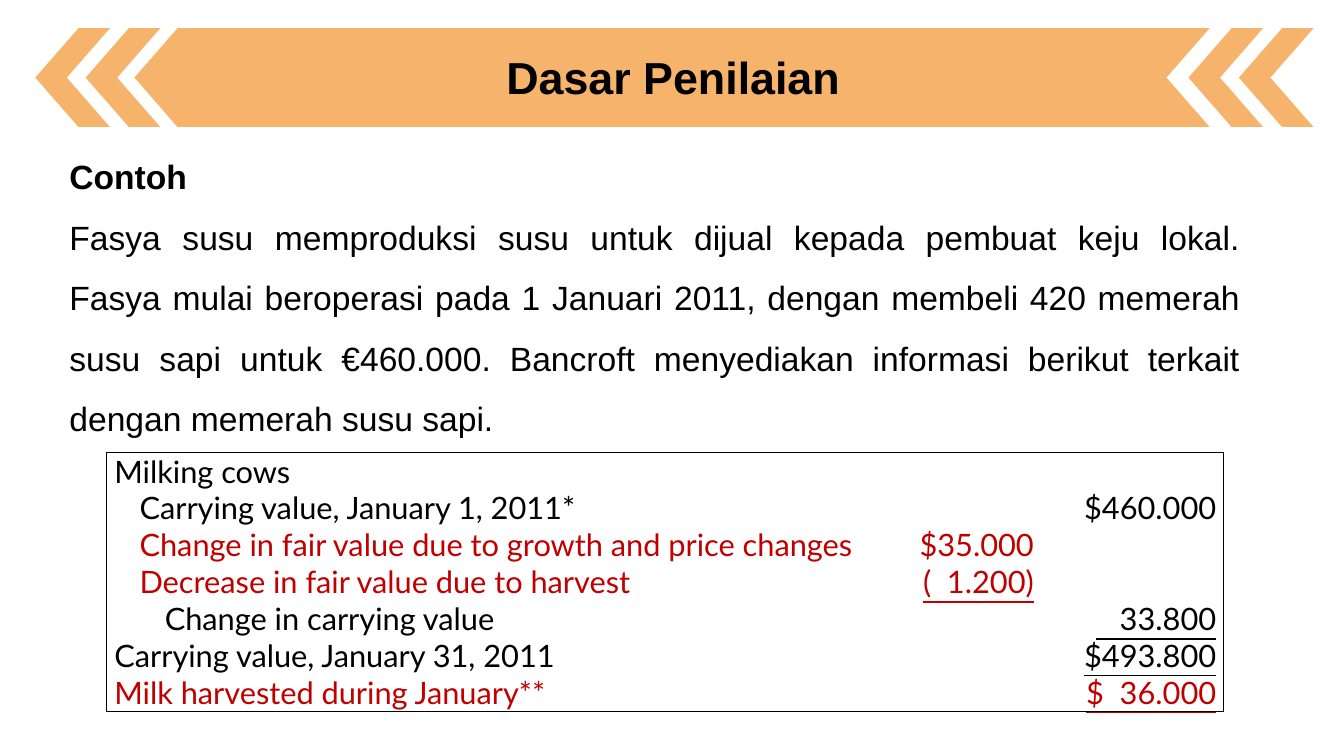
from dataclasses import dataclass

from lxml import etree
from pptx import Presentation
from pptx.dml.color import RGBColor
from pptx.enum import shapes, text
from pptx.oxml import ns
from pptx.util import Pt

COLORS = {"banner": "F3932D", "ink": "000000", "change": "C00000"}
BANNER_OPACITY = 70
BANNER_TOP, BANNER_HEIGHT = 20.16, 70.56
CHEVRON_WIDTH, CHEVRON_NOTCH = 53.3, 30.8
CHEVRON_LEFTS = (25.2, 61.2, 848.9, 884.9)
LEDGER_LINE = 26.4
LEDGER_SIZE = 22


@dataclass
class Entry:
    wording: str
    color: str = "ink"
    indent: float = 0
    underline: bool = False
    lines_before: int = 0


@dataclass
class LedgerColumn:
    width: float
    align: text.PP_ALIGN
    borders: str
    entries: list[Entry]
    lines_above: int = 0


LEDGER = [
    LedgerColumn(549.4, text.PP_ALIGN.JUSTIFY, "LTB", [
        Entry("Milking cows"),
        Entry("Carrying value, January 1, 2011*", indent=18),
        Entry("Change in fair value due to growth and price changes", "change", 18),
        Entry("Decrease in fair value due to harvest", "change", 18),
        Entry("Change in carrying value", indent=36),
        Entry("Carrying value, January 31, 2011"),
        Entry("Milk harvested during January**", "change"),
    ]),
    LedgerColumn(118.1, text.PP_ALIGN.RIGHT, "TB", [
        Entry("$35.000", "change"),
        Entry("(  1.200)", "change", underline=True),
    ], lines_above=2),
    LedgerColumn(130.3, text.PP_ALIGN.RIGHT, "RTB", [
        Entry("$460.000"),
        Entry("   33.800", underline=True, lines_before=2),
        Entry("$493.800", underline=True),
        Entry("$  36.000", "change", underline=True),
    ], lines_above=1),
]

EXAMPLE = (
    "Fasya  susu  memproduksi  susu  untuk  dijual  kepada  pembuat  keju  lokal. "
    "Fasya mulai beroperasi pada 1 Januari 2011, dengan membeli 420 memerah "
    "susu  sapi  untuk  €460.000.  Bancroft  menyediakan  informasi  berikut  terkait "
    "dengan memerah susu sapi."
)


def rgb(name: str) -> RGBColor:
    return RGBColor.from_string(COLORS[name])


def set_font(paragraph, face: str, size: float, color: str = "ink", bold: bool = False) -> None:
    font = paragraph.font
    font.name, font.size, font.bold = face, Pt(size), bold
    font.color.rgb = rgb(color)


def paint_banner_part(part) -> None:
    part.shadow.inherit = False
    part.fill.solid()
    part.fill.fore_color.rgb = rgb("banner")
    part.line.fill.background()
    tint = part.fill._xPr.find(".//" + ns.qn("a:srgbClr"))
    etree.SubElement(tint, ns.qn("a:alpha"), val=str(BANNER_OPACITY * 1000))


def add_banner(slide) -> None:
    for left in CHEVRON_LEFTS:
        chevron = slide.shapes.add_shape(
            shapes.MSO_SHAPE.CHEVRON,
            Pt(left), Pt(BANNER_TOP), Pt(CHEVRON_WIDTH), Pt(BANNER_HEIGHT))
        chevron.adjustments[0] = CHEVRON_NOTCH / CHEVRON_WIDTH
        chevron.rotation = 180
        paint_banner_part(chevron)

    left, right = 96, 864
    middle, bottom = BANNER_TOP + BANNER_HEIGHT / 2, BANNER_TOP + BANNER_HEIGHT
    outline = [
        (left + CHEVRON_NOTCH, BANNER_TOP), (right, BANNER_TOP),
        (right - CHEVRON_NOTCH, middle), (right, bottom),
        (left + CHEVRON_NOTCH, bottom), (left, middle),
    ]
    corners = [(Pt(x), Pt(y)) for x, y in outline]
    ribbon = slide.shapes.build_freeform(*corners[0])
    ribbon.add_line_segments(corners[1:], close=True)
    paint_banner_part(ribbon.convert_to_shape())


def add_title(slide) -> None:
    title = slide.shapes.title
    title.left, title.top, title.width, title.height = Pt(25.2), Pt(26.6), Pt(911.5), Pt(56.9)
    title.text_frame.text = "Dasar Penilaian"
    title.text_frame.vertical_anchor = text.MSO_ANCHOR.MIDDLE
    heading = title.text_frame.paragraphs[0]
    heading.alignment = text.PP_ALIGN.CENTER
    set_font(heading, "Arial", 32, bold=True)


def add_example(slide) -> None:
    frame = slide.shapes.add_textbox(Pt(42.5), Pt(93.6), Pt(850.3), Pt(220.3)).text_frame
    frame.word_wrap = True
    frame.text = "Contoh\n" + EXAMPLE
    for paragraph, bold in zip(frame.paragraphs, (True, False)):
        paragraph.alignment = text.PP_ALIGN.JUSTIFY
        paragraph.line_spacing = 1.5
        set_font(paragraph, "Arial", 24, bold=bold)


def set_borders(cell, sides: str) -> None:
    """Draw black lines on the given sides (L, R, T, B) and none on the others."""
    properties = cell._tc.get_or_add_tcPr()
    for index, side in enumerate("LRTB"):
        border = etree.Element(ns.qn(f"a:ln{side}"), w=str(Pt(1)))
        if side in sides:
            fill = etree.SubElement(border, ns.qn("a:solidFill"))
            etree.SubElement(fill, ns.qn("a:srgbClr"), val=COLORS["ink"])
        else:
            etree.SubElement(border, ns.qn("a:noFill"))
        properties.insert(index, border)


def fill_ledger_cell(cell, column: LedgerColumn) -> None:
    cell.margin_left = cell.margin_right = Pt(5.4)
    cell.margin_top, cell.margin_bottom = Pt(column.lines_above * LEDGER_LINE), 0
    cell.fill.background()
    set_borders(cell, column.borders)
    cell.text_frame.text = "\n".join(entry.wording for entry in column.entries)
    for paragraph, entry in zip(cell.text_frame.paragraphs, column.entries):
        paragraph.alignment = column.align
        paragraph.space_before = Pt(entry.lines_before * LEDGER_LINE)
        set_font(paragraph, "Lato", LEDGER_SIZE, entry.color)
        paragraph.font.underline = entry.underline
        for run in paragraph.runs:
            run.font.underline = entry.underline
        paragraph._p.get_or_add_pPr().set("marL", str(Pt(entry.indent)))


def add_ledger(slide) -> None:
    width = sum(column.width for column in LEDGER)
    table = slide.shapes.add_table(
        1, len(LEDGER), Pt(76.3), Pt(323.3), Pt(width), Pt(7 * LEDGER_LINE)).table
    table.first_row = table.horz_banding = False
    for index, column in enumerate(LEDGER):
        table.columns[index].width = Pt(column.width)
        fill_ledger_cell(table.cell(0, index), column)


def main() -> None:
    deck = Presentation()
    deck.slide_width, deck.slide_height = Pt(960), Pt(540)
    title_only = deck.slide_layouts[5]
    slide = deck.slides.add_slide(title_only)
    add_banner(slide)
    add_title(slide)
    # The title must lie in front of the banner.
    slide.shapes._spTree.append(slide.shapes.title._element)
    add_example(slide)
    add_ledger(slide)
    deck.save("out.pptx")


if __name__ == "__main__":
    main()
